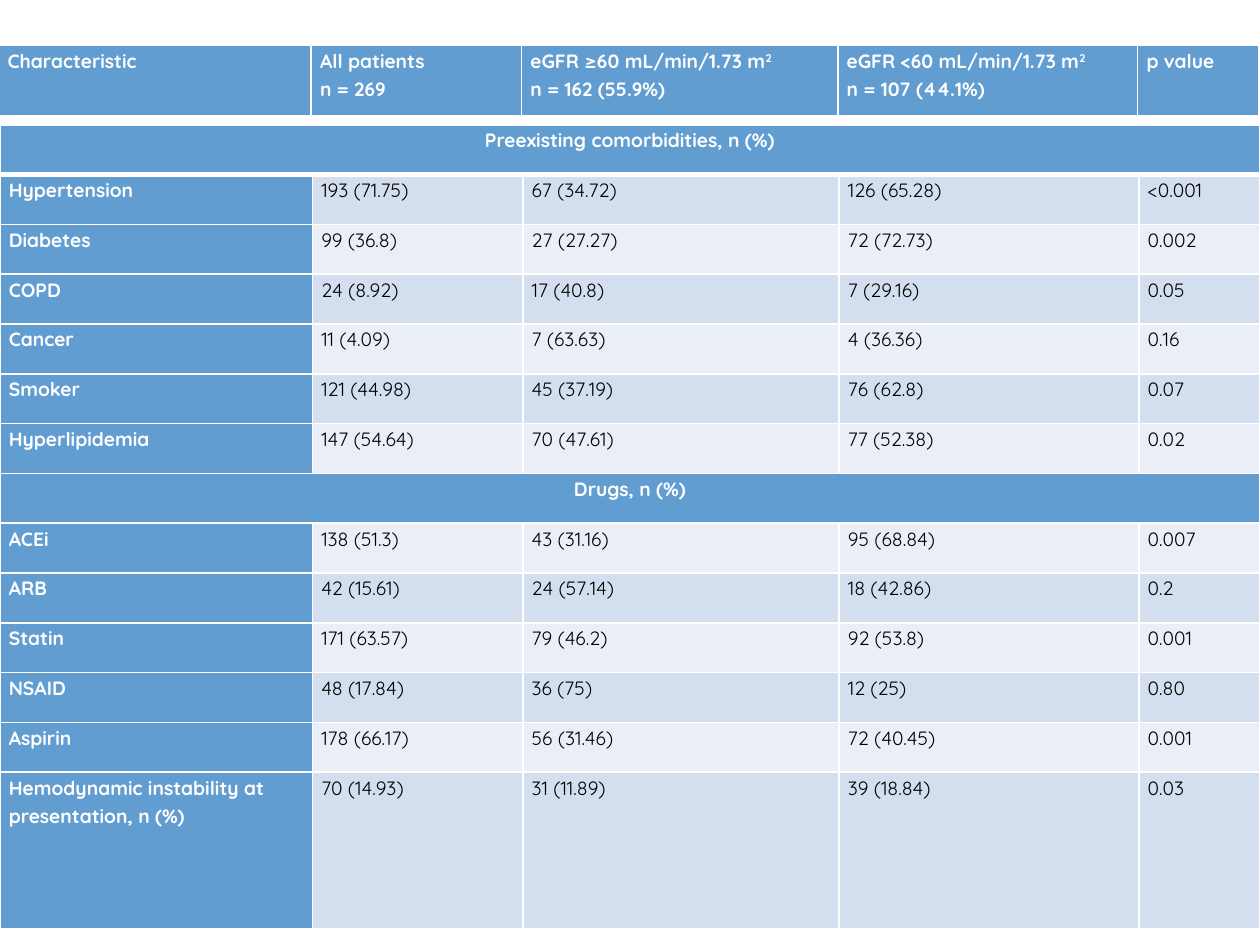
import pptx
import pptx.util
import pptx.dml.color
import pptx.enum.text
import pptx.oxml

HEAD = [("Characteristic", "All patients\nn = 269",
         "eGFR ≥60 mL/min/1.73 m^2\nn = 162 (55.9%)",
         "eGFR <60 mL/min/1.73 m^2\nn = 107 (44.1%)", "p value")]
BODY = [
    ("Preexisting comorbidities, n (%)",),
    ("Hypertension", "193 (71.75)", "67 (34.72)", "126 (65.28)", "<0.001"),
    ("Diabetes", "99 (36.8)", "27 (27.27)", "72 (72.73)", "0.002"),
    ("COPD", "24 (8.92)", "17 (40.8)", "7 (29.16)", "0.05"),
    ("Cancer", "11 (4.09)", "7 (63.63)", "4 (36.36)", "0.16"),
    ("Smoker", "121 (44.98)", "45 (37.19)", "76 (62.8)", "0.07"),
    ("Hyperlipidemia", "147 (54.64)", "70 (47.61)", "77 (52.38)", "0.02"),
    ("Drugs, n (%)",),
    ("ACEi", "138 (51.3)", "43 (31.16)", "95 (68.84)", "0.007"),
    ("ARB", "42 (15.61)", "24 (57.14)", "18 (42.86)", "0.2"),
    ("Statin", "171 (63.57)", "79 (46.2)", "92 (53.8)", "0.001"),
    ("NSAID", "48 (17.84)", "36 (75)", "12 (25)", "0.80"),
    ("Aspirin", "178 (66.17)", "56 (31.46)", "72 (40.45)", "0.001"),
    ("Hemodynamic instability at\npresentation, n (%)",
     "70 (14.93)", "31 (11.89)", "39 (18.84)", "0.03"),
]
COLS = [2.48, 1.67, 2.51, 2.38, 0.96]
LAST = 1.24
STEP = (6.38 - LAST) / (len(BODY) - 1)
BLUE, WHITE, BLACK = "629DD1", "FFFFFF", "000000"
BANDS = ["EAEFF7", "D3DFEE"]
NS = "http://schemas.openxmlformats.org/drawingml/2006/main"
inch, pt = pptx.util.Inches, pptx.util.Pt


def color(code):
    return pptx.dml.color.RGBColor.from_string(code)


def edge(cell, base):
    props = cell._tc.get_or_add_tcPr()
    for side in "LRTB":
        width = pt(base if side == "B" else 1)
        props.append(pptx.oxml.parse_xml(
            f'<a:ln{side} xmlns:a="{NS}" w="{width}"><a:solidFill>'
            f'<a:srgbClr val="{WHITE}"/></a:solidFill></a:ln{side}>'))


def write(cell, text, ink, bold, align):
    cell.margin_left = cell.margin_right = inch(0.07)
    cell.margin_top = cell.margin_bottom = 0
    cell.text_frame.text = text
    for para in cell.text_frame.paragraphs:
        main, mark, power = para.text.partition("^")
        para.text = main
        if mark:
            run = para.add_run()
            run.text = power
            run._r.get_or_add_rPr().set("baseline", "30000")
        para.alignment = align
        para.line_spacing = 1.15
        para.space_before = pt(0.1)
        for run in para.runs:
            run.font.name = "Quicksand"
            run.font.size = pt(11)
            run.font.bold = bold
            run.font.color.rgb = color(ink)


def build(slide, rows, left, top, highs, head):
    frame = slide.shapes.add_table(
        len(rows), len(COLS), inch(left), inch(top),
        inch(sum(COLS)), inch(sum(highs)))
    table = frame.table
    table.first_row = head
    table.horz_banding = False
    for col, width in zip(table.columns, COLS):
        col.width = inch(width)
    for i, (row, high) in enumerate(zip(rows, highs)):
        table.rows[i].height = inch(high)
        wide = len(row) == 1
        if wide:
            table.cell(i, 0).merge(table.cell(i, len(COLS) - 1))
        for j in range(len(COLS)):
            cell = table.cell(i, j)
            key = head or wide or j == 0
            edge(cell, 3 if i == 0 else 1)
            cell.fill.solid()
            cell.fill.fore_color.rgb = color(BLUE if key else BANDS[i % 2])
            if j < len(row):
                align = pptx.enum.text.PP_ALIGN
                write(cell, row[j], WHITE if key else BLACK, key,
                      align.CENTER if wide else align.LEFT)


def main():
    deck = pptx.Presentation()
    deck.slide_width, deck.slide_height = inch(10), inch(7.5)
    slide = deck.slides.add_slide(deck.slide_layouts[6])
    highs = [STEP] * (len(BODY) - 1) + [LAST]
    build(slide, BODY, 0, 0.99, highs, False)
    build(slide, HEAD, -0.01, 0.36, [0.57], True)
    deck.save("out.pptx")


if __name__ == "__main__":
    main()
